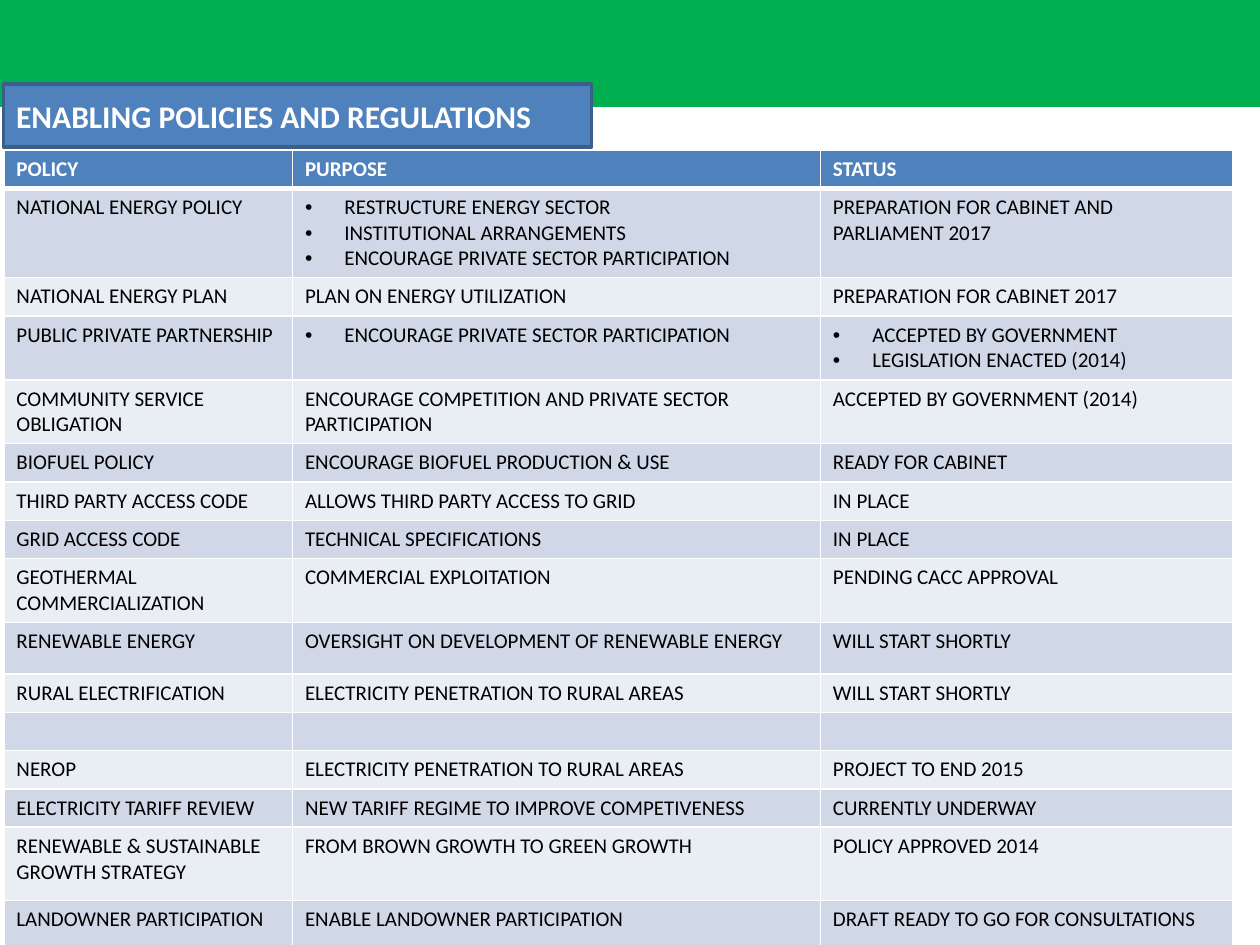
"""Build the slide on enabling energy policies and regulations."""
from lxml.etree import SubElement
from pptx import Presentation
from pptx.dml.color import RGBColor
from pptx.enum.shapes import MSO_SHAPE
from pptx.enum.text import MSO_ANCHOR, MSO_AUTO_SIZE, PP_ALIGN
from pptx.oxml import parse_xml
from pptx.oxml.ns import nsdecls, qn
from pptx.util import Pt

THEME = {
    "font": "Calibri",
    "heading_size": Pt(18),
    "table_size": Pt(12),
    "banner": RGBColor.from_string("00B050"),
    "accent": RGBColor.from_string("4F81BD"),
    "accent_edge": RGBColor.from_string("3A5F8C"),
    "bands": [RGBColor.from_string("D0D8E8"), RGBColor.from_string("E9EDF4")],
    "light": RGBColor.from_string("FFFFFF"),
    "dark": RGBColor.from_string("000000"),
}
HEADING_FORMAT = {"name": THEME["font"], "size": THEME["heading_size"], "bold": True}
HEADER_FORMAT = {"name": THEME["font"], "size": THEME["table_size"], "bold": True}
BODY_FORMAT = HEADER_FORMAT | {"bold": False}

ONE_LINE, TWO_LINES, THREE_LINES = 21.9, 36.5, 51.1
COLUMN_WIDTHS = [164.9, 301.7, 235.4]
BULLET_INDENT = Pt(22.5)
POLICIES = [
    (ONE_LINE, "POLICY", "PURPOSE", "STATUS"),
    (THREE_LINES, "NATIONAL ENERGY POLICY",
     ["RESTRUCTURE ENERGY SECTOR", "INSTITUTIONAL ARRANGEMENTS",
      "ENCOURAGE PRIVATE SECTOR PARTICIPATION"],
     "PREPARATION FOR CABINET AND PARLIAMENT 2017"),
    (ONE_LINE, "NATIONAL ENERGY PLAN", "PLAN ON ENERGY UTILIZATION",
     "PREPARATION FOR CABINET 2017"),
    (TWO_LINES, "PUBLIC PRIVATE PARTNERSHIP", ["ENCOURAGE PRIVATE SECTOR PARTICIPATION"],
     ["ACCEPTED BY GOVERNMENT", "LEGISLATION ENACTED (2014)"]),
    (TWO_LINES, "COMMUNITY SERVICE OBLIGATION",
     "ENCOURAGE COMPETITION AND PRIVATE SECTOR PARTICIPATION",
     "ACCEPTED BY GOVERNMENT (2014)"),
    (ONE_LINE, "BIOFUEL POLICY", "ENCOURAGE BIOFUEL PRODUCTION & USE", "READY FOR CABINET"),
    (ONE_LINE, "THIRD PARTY ACCESS CODE", "ALLOWS THIRD PARTY ACCESS TO GRID", "IN PLACE"),
    (ONE_LINE, "GRID ACCESS CODE", "TECHNICAL SPECIFICATIONS", "IN PLACE"),
    (TWO_LINES, "GEOTHERMAL COMMERCIALIZATION", "COMMERCIAL EXPLOITATION",
     "PENDING CACC APPROVAL"),
    (29.5, "RENEWABLE ENERGY", "OVERSIGHT ON DEVELOPMENT OF RENEWABLE ENERGY",
     "WILL START SHORTLY"),
    (ONE_LINE, "RURAL ELECTRIFICATION", "ELECTRICITY PENETRATION TO RURAL AREAS",
     "WILL START SHORTLY"),
    (ONE_LINE, "", "", ""),
    (ONE_LINE, "NEROP", "ELECTRICITY PENETRATION TO RURAL AREAS", "PROJECT TO END 2015"),
    (ONE_LINE, "ELECTRICITY TARIFF REVIEW", "NEW TARIFF REGIME TO IMPROVE COMPETIVENESS",
     "CURRENTLY UNDERWAY"),
    (41.8, "RENEWABLE & SUSTAINABLE GROWTH STRATEGY", "FROM BROWN GROWTH TO GREEN GROWTH",
     "POLICY APPROVED 2014"),
    (29.5, "LANDOWNER PARTICIPATION", "ENABLE LANDOWNER PARTICIPATION",
     "DRAFT READY TO GO FOR CONSULTATIONS"),
]


def write(paragraph, wording, text_format, color):
    run = paragraph.add_run()
    run.text = wording
    for attribute, value in text_format.items():
        setattr(run.font, attribute, value)
    run.font.color.rgb = color


def paint(panel, fill, edge):
    panel.fill.solid()
    panel.fill.fore_color.rgb = fill
    panel.line.color.rgb = edge
    panel.line.width = Pt(2)


deck = Presentation()
deck.slide_width, deck.slide_height = Pt(720), Pt(540)
slide = deck.slides.add_slide(deck.slide_layouts[5])

banner = slide.shapes.add_shape(MSO_SHAPE.RECTANGLE, 0, 0, deck.slide_width, Pt(60))
banner.shadow.inherit = False
paint(banner, THEME["banner"], THEME["banner"])
slide.shapes.element.remove(banner.element)
slide.shapes.element.insert(2, banner.element)

heading = slide.shapes.title
position = {"left": Pt(2), "top": Pt(48), "width": Pt(336), "height": Pt(36)}
for attribute, value in position.items():
    setattr(heading, attribute, value)
heading.element.spPr.append(parse_xml(
    f'<a:prstGeom {nsdecls("a")} prst="roundRect"><a:avLst/></a:prstGeom>'))
paint(heading, THEME["accent"], THEME["accent_edge"])
frame_format = {"word_wrap": True, "auto_size": MSO_AUTO_SIZE.NONE,
                "vertical_anchor": MSO_ANCHOR.MIDDLE}
for attribute, value in frame_format.items():
    setattr(heading.text_frame, attribute, value)
heading_line = heading.text_frame.paragraphs[0]
heading_line.alignment = PP_ALIGN.LEFT
write(heading_line, "ENABLING POLICIES AND REGULATIONS", HEADING_FORMAT, THEME["light"])

policy_table = slide.shapes.add_table(
    len(POLICIES), len(COLUMN_WIDTHS), Pt(2.2), Pt(85.7),
    Pt(sum(COLUMN_WIDTHS)), Pt(sum(policy[0] for policy in POLICIES))).table
for column, width in zip(policy_table.columns, COLUMN_WIDTHS):
    column.width = Pt(width)

for row_index, (height, *entries) in enumerate(POLICIES):
    policy_table.rows[row_index].height = Pt(height)
    is_header = row_index == 0
    fill = THEME["accent"] if is_header else THEME["bands"][(row_index - 1) % 2]
    text_format = HEADER_FORMAT if is_header else BODY_FORMAT
    color = THEME["light"] if is_header else THEME["dark"]
    borders = {"lnL": 1, "lnR": 1, "lnT": 3 if row_index == 1 else 1,
               "lnB": 3 if is_header else 1}
    for column_index, entry in enumerate(entries):
        cell = policy_table.cell(row_index, column_index)
        cell.fill.solid()
        cell.fill.fore_color.rgb = fill
        for order, (side, weight) in enumerate(borders.items()):
            cell._tc.tcPr.insert(order, parse_xml(
                f'<a:{side} {nsdecls("a")} w="{Pt(weight)}"><a:solidFill>'
                f'<a:srgbClr val="{THEME["light"]}"/></a:solidFill></a:{side}>'))
        bulleted = isinstance(entry, list)
        for line_index, wording in enumerate(entry if bulleted else [entry]):
            text = cell.text_frame
            paragraph = text.add_paragraph() if line_index else text.paragraphs[0]
            if bulleted:
                properties = paragraph._p.get_or_add_pPr()
                properties.set("marL", str(BULLET_INDENT))
                properties.set("indent", str(-BULLET_INDENT))
                SubElement(properties, qn("a:buFont"), typeface="Arial")
                SubElement(properties, qn("a:buChar"), char="•")
            if wording:
                write(paragraph, wording, text_format, color)
            else:
                SubElement(paragraph._p, qn("a:endParaRPr"),
                           sz=str(THEME["table_size"].centipoints))

deck.save("out.pptx")
